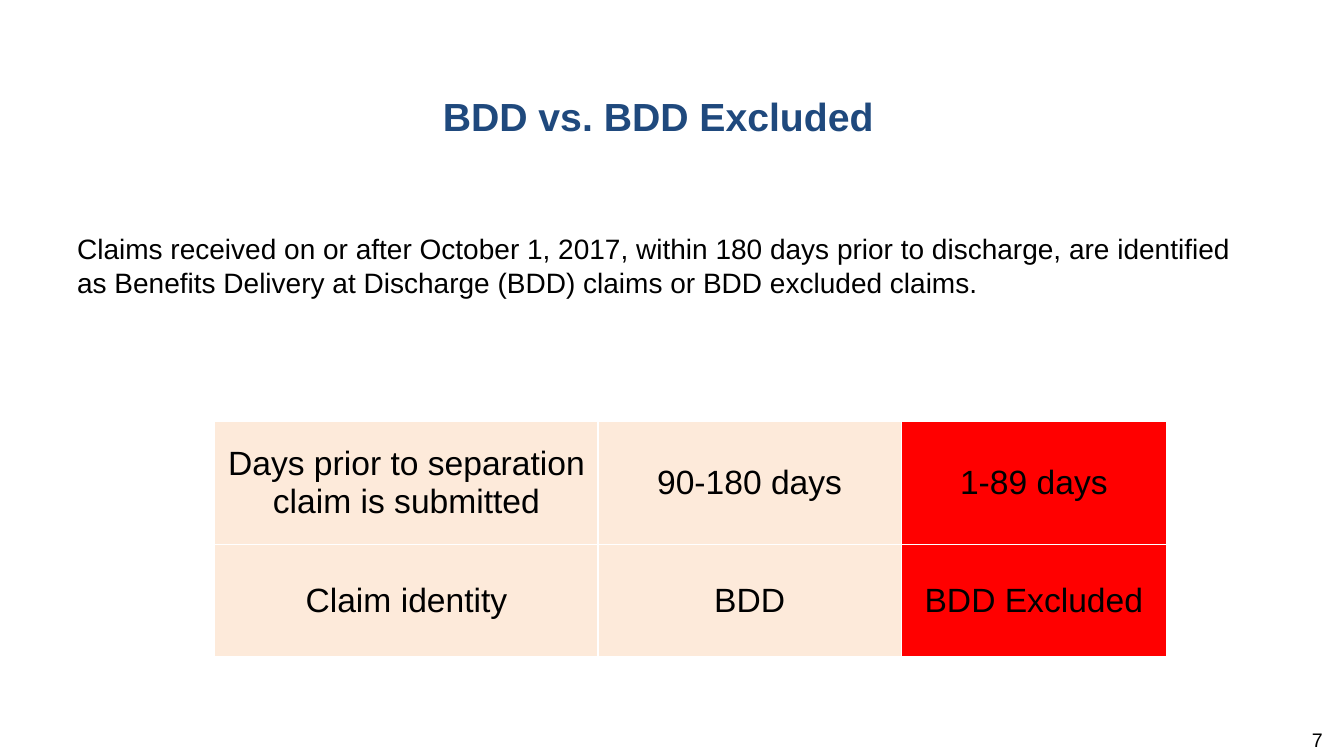
from dataclasses import dataclass

from lxml.etree import SubElement
from pptx import Presentation
from pptx.dml.color import RGBColor as RGB
from pptx.enum.text import MSO_ANCHOR as ANCHOR, PP_ALIGN as ALIGN
from pptx.oxml.ns import qn
from pptx.util import Pt


@dataclass(frozen=True)
class Theme:
    font: str = "Arial"
    navy: RGB = RGB(0x1F, 0x49, 0x7D)
    black: RGB = RGB(0, 0, 0)
    peach: RGB = RGB(0xFD, 0xEA, 0xDA)
    red: RGB = RGB(0xFF, 0, 0)
    border: str = "FFFFFF"
    title: int = 28
    body: int = 20
    table: int = 24
    number: int = 14


T = Theme()


def write(tf, text, size, align, color=T.black, bold=False, after=0):
    tf.word_wrap = True
    p = tf.paragraphs[0]
    p.text = text
    p.alignment = align
    p.space_after = Pt(after)
    p.font.name, p.font.size, p.font.bold = T.font, Pt(size), bold
    p.font.color.rgb = color


def add_title(s, box, text):
    title = s.shapes.title
    title.left, title.top, title.width, title.height = map(Pt, box)
    tf = title.text_frame
    tf.vertical_anchor = ANCHOR.TOP
    tf.margin_right = Pt(27)  # sets the heading slightly left of centre
    write(tf, text, T.title, ALIGN.CENTER, T.navy, bold=True)


def add_text(s, box, text, size, align, top=3.6):
    tf = s.shapes.add_textbox(*map(Pt, box)).text_frame
    tf.margin_top = Pt(top)
    write(tf, text, size, align, after=6)


def set_borders(cell):
    tc_pr = cell._tc.get_or_add_tcPr()
    for i, side in enumerate(("lnL", "lnR", "lnT", "lnB")):
        ln = tc_pr.makeelement(qn(f"a:{side}"), {"w": str(Pt(1))})
        fill = SubElement(ln, qn("a:solidFill"))
        SubElement(fill, qn("a:srgbClr"), val=T.border)
        tc_pr.insert(i, ln)  # borders come before the cell fill


def add_claims_table(s, box, rows, widths, heights):
    table = s.shapes.add_table(len(rows), len(widths), *map(Pt, box)).table
    for column, width in zip(table.columns, widths):
        column.width = Pt(width)
    for row, height, texts in zip(table.rows, heights, rows):
        row.height = Pt(height)
        for cell, text, color in zip(row.cells, texts, (T.peach, T.peach, T.red)):
            cell.fill.solid()
            cell.fill.fore_color.rgb = color
            cell.vertical_anchor = ANCHOR.MIDDLE
            write(cell.text_frame, text, T.table, ALIGN.CENTER)
            set_borders(cell)


def build_slide(prs):
    s = prs.slides.add_slide(prs.slide_layouts[5])

    # Heading and introduction
    add_title(s, (0, 62.6, 960, 85.7), "BDD vs. BDD Excluded")
    add_text(s, (48, 162, 864, 308),
             "Claims received on or after October 1, 2017, within 180 days prior to "
             "discharge, are identified as Benefits Delivery at Discharge (BDD) claims "
             "or BDD excluded claims.", T.body, ALIGN.LEFT)

    # Page number
    add_text(s, (728, 520, 224, 28.8), "7", T.number, ALIGN.RIGHT, top=0)

    # Claim identity by days before separation
    add_claims_table(s, (153.5, 301, 679.7, 167.8), [
        ("Days prior to separation claim is submitted", "90-180 days", "1-89 days"),
        ("Claim identity", "BDD", "BDD Excluded"),
    ], widths=(273.6, 216.7, 189.4), heights=(87.9, 79.9))


def main():
    prs = Presentation()
    prs.slide_width, prs.slide_height = Pt(960), Pt(540)
    build_slide(prs)
    prs.save("out.pptx")


if __name__ == "__main__":
    main()
